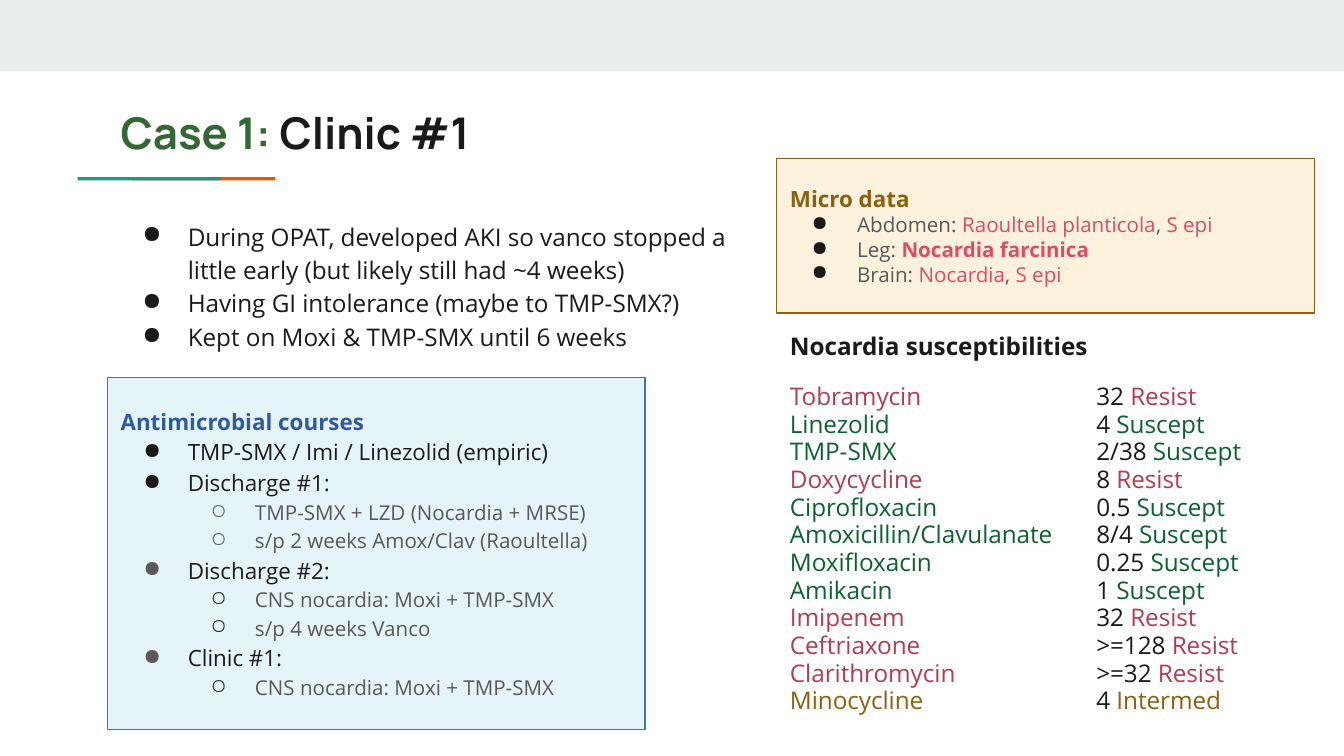
from lxml.etree import SubElement
from pptx import Presentation
from pptx.dml.color import RGBColor
from pptx.enum.shapes import MSO_SHAPE
from pptx.enum.text import MSO_ANCHOR, MSO_AUTO_SIZE, PP_ALIGN
from pptx.oxml.ns import qn
from pptx.util import Cm, Pt

INK, GREY, ROSE = "1A1A1A", "595959", "DC4C64"
RED, GREEN, OCHRE = "B03D50", "0C622E", "896110"
BODY_FONT = "Open Sans"
RESULT_COLORS = {"Resist": RED, "Suscept": GREEN, "Intermed": OCHRE}

CLINIC_NOTES = [
    "During OPAT, developed AKI so vanco stopped a little early (but likely still had ~4 weeks)",
    "Having GI intolerance (maybe to TMP-SMX?)",
    "Kept on Moxi & TMP-SMX until 6 weeks",
]
COURSES = [
    (0, INK, "TMP-SMX / Imi / Linezolid (empiric)"),
    (0, INK, "Discharge #1:"),
    (1, GREY, "TMP-SMX + LZD (Nocardia + MRSE)"),
    (1, GREY, "s/p 2 weeks Amox/Clav (Raoultella)"),
    (0, GREY, "Discharge #2:"),
    (1, INK, "CNS nocardia: Moxi + TMP-SMX"),
    (1, INK, "s/p 4 weeks Vanco"),
    (0, GREY, "Clinic #1:"),
    (1, INK, "CNS nocardia: Moxi + TMP-SMX"),
]
CULTURES = [
    [("Abdomen: ", GREY), ("Raoultella planticola", ROSE), (", ", GREY), ("S epi", ROSE)],
    [("Leg: ", GREY), ("Nocardia farcinica", ROSE, True)],
    [("Brain: ", GREY), ("Nocardia", ROSE), (", ", GREY), ("S epi", ROSE)],
]
SUSCEPTIBILITIES = [
    ("Tobramycin", "32", "Resist"),
    ("Linezolid", "4", "Suscept"),
    ("TMP-SMX", "2/38", "Suscept"),
    ("Doxycycline", "8", "Resist"),
    ("Ciprofloxacin", "0.5", "Suscept"),
    ("Amoxicillin/Clavulanate", "8/4", "Suscept"),
    ("Moxifloxacin", "0.25", "Suscept"),
    ("Amikacin", "1", "Suscept"),
    ("Imipenem", "32", "Resist"),
    ("Ceftriaxone", ">=128", "Resist"),
    ("Clarithromycin", ">=32", "Resist"),
    ("Minocycline", "4", "Intermed"),
]


def color(value):
    """Turn a hex string into a colour."""
    return RGBColor.from_string(value)


def place(box):
    """Turn a box in centimetres into lengths."""
    return [Cm(length) for length in box]


def prepare(frame, anchor=MSO_ANCHOR.TOP):
    """Set the margins, wrapping and anchor of a text frame."""
    frame.word_wrap = True
    frame.auto_size = MSO_AUTO_SIZE.NONE
    frame.vertical_anchor = anchor
    frame.margin_left = frame.margin_right = Cm(0.25)
    frame.margin_top = frame.margin_bottom = Cm(0.25)
    return frame


def add_rectangle(slide, box, fill, line=None):
    """Add a flat rectangle with an optional thin outline."""
    shape = slide.shapes.add_shape(MSO_SHAPE.RECTANGLE, *place(box))
    shape.shadow.inherit = False
    shape.fill.solid()
    shape.fill.fore_color.rgb = color(fill)
    if line:
        shape.line.color.rgb = color(line)
        shape.line.width = Pt(0.75)
    else:
        shape.line.fill.background()
    return shape


def add_bullet(paragraph, mark, hue, level=0, hang=0.86):
    """Give a paragraph a coloured bullet and a hanging indent."""
    paragraph.level = level
    properties = paragraph._p.get_or_add_pPr()
    properties.set("marL", str(Cm(1.27 * (level + 1))))
    properties.set("indent", str(-Cm(hang)))
    bullet_color = SubElement(properties, qn("a:buClr"))
    SubElement(bullet_color, qn("a:srgbClr"), val=hue)
    SubElement(properties, qn("a:buChar"), char=mark)


def add_tab(paragraph, position):
    """Add a left tab stop to a paragraph."""
    tabs = SubElement(paragraph._p.get_or_add_pPr(), qn("a:tabLst"))
    SubElement(tabs, qn("a:tab"), pos=str(Cm(position)), algn="l")


def write(paragraph, runs, size, spacing=1.0, font=BODY_FONT):
    """Write (text, colour, bold) runs into a paragraph."""
    paragraph.alignment = PP_ALIGN.LEFT
    paragraph.line_spacing = spacing
    paragraph.font.name = font
    paragraph.font.size = Pt(size)
    for text, hue, *bold in runs:
        run = paragraph.add_run()
        run.text = text
        run.font.color.rgb = color(hue)
        run.font.bold = bool(bold)


def add_header(slide, box):
    """Place the top band, the title and its two-colour rule."""
    left, top, width, height = box
    add_rectangle(slide, (0, 0, 25.4, 1.35), "E9EDEE")
    for offset, hue in ((1.03, "EB5600"), (0, "1A9988")):
        add_rectangle(slide, (left - 0.56 + offset, top + height + 0.1, 2.7, 0.06), hue)
    title = slide.shapes.title
    title.left, title.top, title.width, title.height = place(box)
    runs = [("Case 1:", "356635", True), (" Clinic #1", INK, True)]
    write(prepare(title.text_frame).paragraphs[0], runs, 23.4, font="Manrope")


def add_clinic_notes(slide, box):
    """Place the bulleted clinic notes."""
    frame = prepare(slide.shapes.add_textbox(*place(box)).text_frame)
    for index, note in enumerate(CLINIC_NOTES):
        paragraph = frame.add_paragraph() if index else frame.paragraphs[0]
        add_bullet(paragraph, "●", INK)
        write(paragraph, [(note, INK)], 13, 1.15)


def add_courses(slide, box):
    """Place the blue panel of antimicrobial courses."""
    panel = add_rectangle(slide, box, "E5F4F8", "3B7E94")
    frame = prepare(panel.text_frame, MSO_ANCHOR.MIDDLE)
    write(frame.paragraphs[0], [("Antimicrobial courses", "2F5AA2", True)], 12)
    for level, bullet_hue, text in COURSES:
        paragraph = frame.add_paragraph()
        add_bullet(paragraph, "●○"[level], bullet_hue, level, 0.84)
        write(paragraph, [(text, GREY if level else INK)], 12 - level, 1.15)


def add_cultures(slide, box):
    """Place the yellow panel of microbiology data."""
    panel = add_rectangle(slide, box, "FBF1DD", OCHRE)
    frame = prepare(panel.text_frame, MSO_ANCHOR.MIDDLE)
    write(frame.paragraphs[0], [("Micro data", OCHRE, True)], 12)
    for runs in CULTURES:
        paragraph = frame.add_paragraph()
        add_bullet(paragraph, "●", INK)
        write(paragraph, runs, 11)


def add_susceptibilities(slide, box):
    """Place the tabbed list of drug susceptibilities."""
    frame = prepare(slide.shapes.add_textbox(*place(box)).text_frame)
    write(frame.paragraphs[0], [("Nocardia susceptibilities", INK, True)], 13, 0.95)
    for index, (drug, value, result) in enumerate(SUSCEPTIBILITIES):
        hue = RESULT_COLORS[result]
        paragraph = frame.add_paragraph()
        add_tab(paragraph, 5.79)
        write(paragraph, [(f"{drug}\t", hue), (f"{value} ", INK), (result, hue)], 13, 0.95)
        if index == 0:
            paragraph.space_before = Pt(12)


def main():
    """Build the slide and save it."""
    presentation = Presentation()
    presentation.slide_width, presentation.slide_height = Cm(25.4), Cm(14.29)
    slide = presentation.slides.add_slide(presentation.slide_layouts[5])
    add_header(slide, (2.03, 1.75, 21.36, 1.5))
    add_clinic_notes(slide, (2.03, 3.86, 12.14, 3.02))
    add_courses(slide, (2.03, 7.14, 10.16, 6.65))
    add_cultures(slide, (14.68, 3, 10.16, 2.92))
    add_susceptibilities(slide, (14.68, 6.05, 10.16, 7.75))
    presentation.save("out.pptx")


if __name__ == "__main__":
    main()
